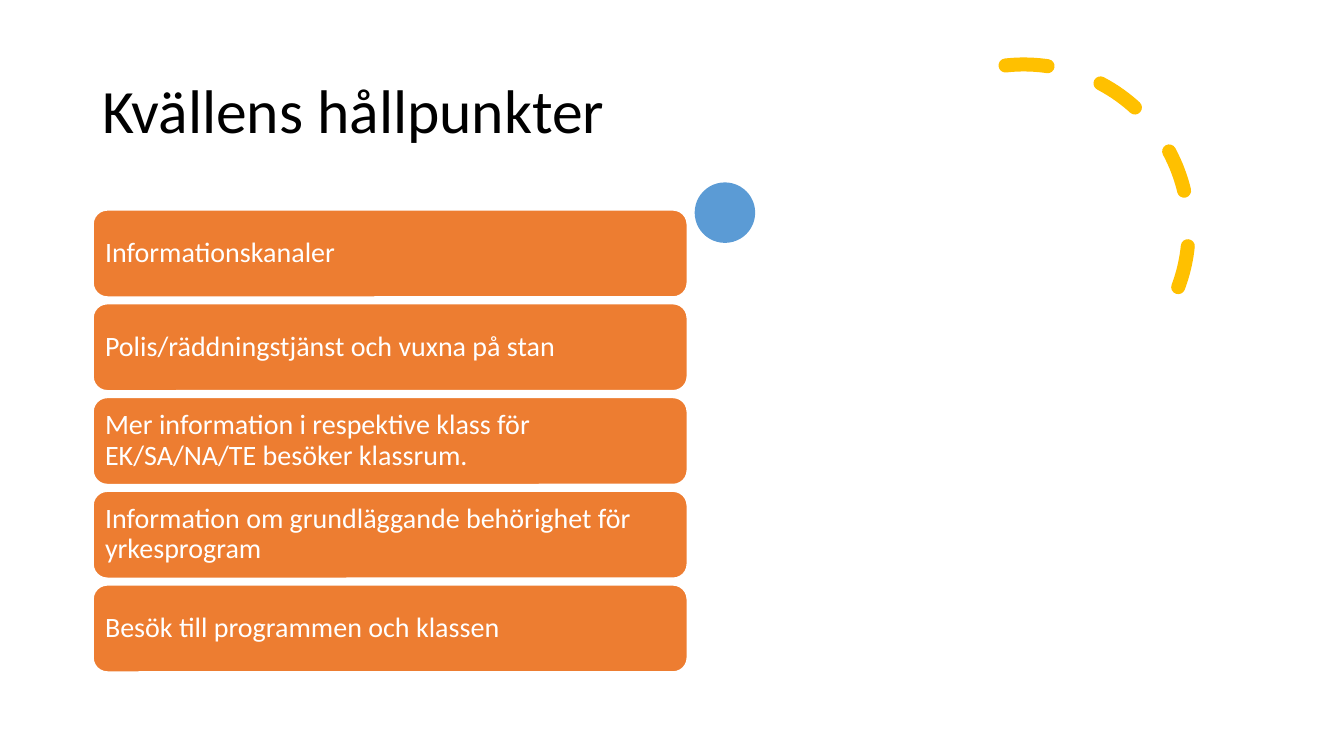
from lxml import etree
from pptx import Presentation
from pptx.dml.color import RGBColor
from pptx.enum.dml import MSO_LINE
from pptx.enum.shapes import MSO_SHAPE
from pptx.enum.text import MSO_ANCHOR, PP_ALIGN
from pptx.oxml.ns import qn
from pptx.util import Inches, Pt

TITLE = "Kvällens hållpunkter"
AGENDA = [
    "Informationskanaler",
    "Polis/räddningstjänst och vuxna på stan",
    "Mer information i respektive klass för EK/SA/NA/TE besöker klassrum.",
    "Information om grundläggande behörighet för yrkesprogram",
    "Besök till programmen och klassen",
]
COLORS = {"arc": "FFC000", "dot": "5B9BD5", "bar": "ED7D31", "white": "FFFFFF", "title": "000000"}
LEFT, FIRST_TOP, BAR_WIDTH, BAR_HEIGHT, BAR_STEP = 0.92, 2.08, 5.9, 0.87, 0.93
ARC_START, ARC_END = 263.62, 29.69
ARC_UNIT = 0.6


def color(name):
    return RGBColor.from_string(COLORS[name])


def apply(target, values):
    for name, value in values.items():
        setattr(target, name, value)


def add_shape(kind, box, fill=None, line=None, line_width=0):
    shape = slide.shapes.add_shape(kind, *map(Inches, box))
    shape.shadow.inherit = False
    for fill_format, name in ((shape.fill, fill), (shape.line.fill, line)):
        if name:
            fill_format.solid()
            fill_format.fore_color.rgb = color(name)
        else:
            fill_format.background()
    if line:
        shape.line.width = Pt(line_width)
    return shape


def write(shape, text, size, name, margin):
    frame = shape.text_frame
    apply(frame, {"word_wrap": True, "vertical_anchor": MSO_ANCHOR.MIDDLE})
    apply(frame, {f"margin_{side}": Inches(margin) for side in ("left", "top", "right", "bottom")})
    paragraph = frame.paragraphs[0]
    apply(paragraph, {"alignment": PP_ALIGN.LEFT, "line_spacing": 0.9})
    run = paragraph.add_run()
    run.text = text
    apply(run.font, {"name": "Calibri", "size": Pt(size)})
    run.font.color.rgb = color(name)


presentation = Presentation()
apply(presentation, {"slide_width": Inches(13.33), "slide_height": Inches(7.5)})
slide = presentation.slides.add_slide(presentation.slide_layouts[6])

arc = add_shape(MSO_SHAPE.ARC, (8.52, 0.64, 3.27, 3.27), line="arc", line_width=10)
arc.adjustments[0] = ARC_START * ARC_UNIT
arc.adjustments[1] = ARC_END * ARC_UNIT
arc.line.dash_style = MSO_LINE.DASH
outline = arc.element.spPr.find(qn("a:ln"))
outline.set("cap", "rnd")
etree.SubElement(outline, qn("a:round"))

title = slide.shapes.add_textbox(*map(Inches, (LEFT, 0.4, 11.5, 1.45)))
write(title, TITLE, 44, "title", 0.1)

add_shape(MSO_SHAPE.OVAL, (6.89, 1.81, 0.6, 0.6), fill="dot")

for index, item in enumerate(AGENDA):
    box = (LEFT, FIRST_TOP + index * BAR_STEP, BAR_WIDTH, BAR_HEIGHT)
    bar = add_shape(MSO_SHAPE.ROUNDED_RECTANGLE, box, "bar", "white", 1.5)
    write(bar, item, 20, "white", 0.08)

presentation.save("out.pptx")
